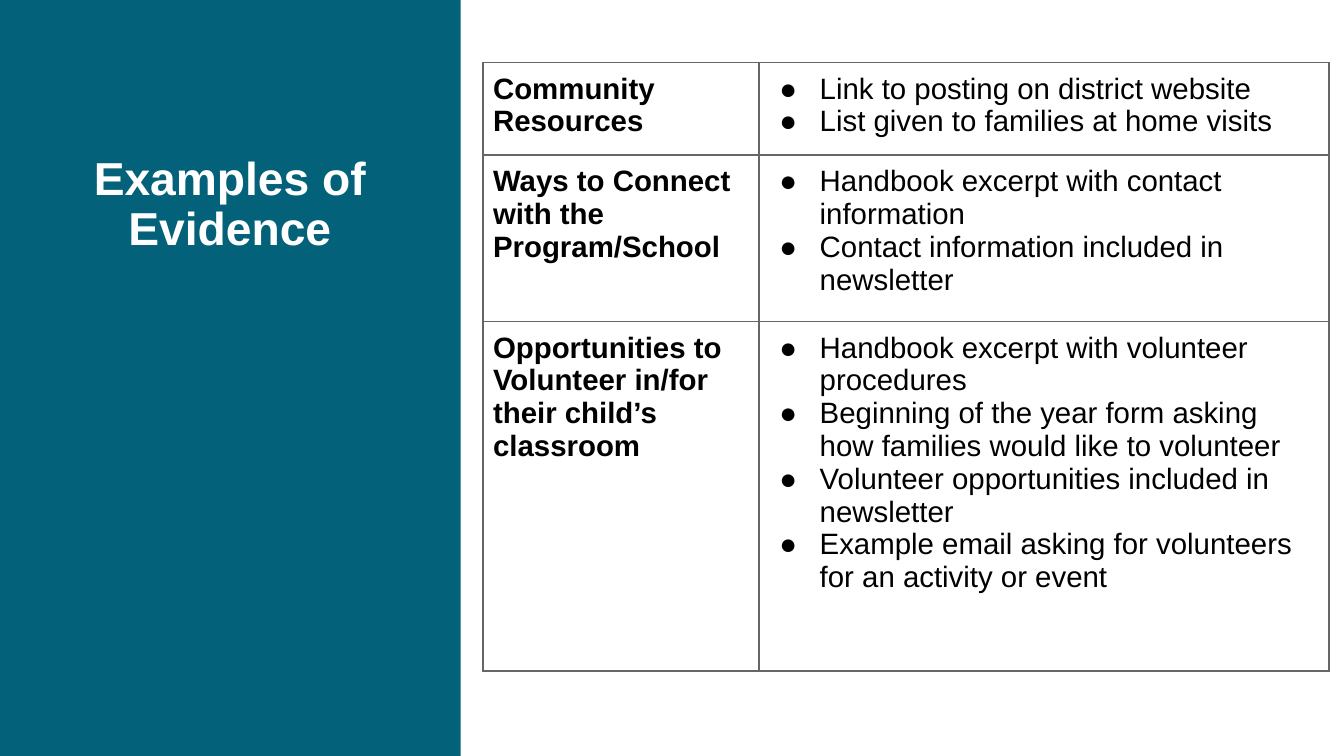
from pptx import Presentation
from pptx.dml.color import RGBColor
from pptx.enum import shapes, text
from pptx.oxml import parse_xml
from pptx.oxml import ns
from pptx.util import Inches, Pt

TITLE = "Examples of Evidence"
EVIDENCE = [
    ("Community Resources", [
        "Link to posting on district website",
        "List given to families at home visits",
    ]),
    ("Ways to Connect with the Program/School", [
        "Handbook excerpt with contact information",
        "Contact information included in newsletter",
    ]),
    ("Opportunities to Volunteer in/for their child’s classroom", [
        "Handbook excerpt with volunteer procedures",
        "Beginning of the year form asking how families would like to volunteer",
        "Volunteer opportunities included in newsletter",
        "Example email asking for volunteers for an activity or event",
    ]),
]
COLUMN_WIDTHS = [2.74, 5.65]
ROW_HEIGHTS = [0.92, 1.65, 3.47]
TABLE_LEFT, TABLE_TOP = 4.79, 0.62
TEAL, WHITE, BLACK, GRAY = "03617A", "FFFFFF", "000000", "666666"
TITLE_FONT = {"name": "Arial", "size": Pt(33), "bold": True}
HEADING_FONT = {"name": "Arial", "size": Pt(21), "bold": True}
ITEM_FONT = {**HEADING_FONT, "bold": False}
TITLE_BOX = {"left": Inches(0.15), "top": Inches(1.4),
             "width": Inches(4.26), "height": Inches(1.28)}
CELL_MARGINS = {f"margin_{side}": Inches(0.1)
                for side in ("left", "right", "top", "bottom")}
BULLET = {"marL": Inches(0.5), "indent": Inches(-0.4)}


def color(value):
    return RGBColor.from_string(value)


def apply(target, values):
    for name, value in values.items():
        setattr(target, name, value)


def add_text(paragraph, content, font, font_color):
    run = paragraph.add_run()
    run.text = content
    apply(run.font, font)
    run.font.color.rgb = color(font_color)


def add_bullet(paragraph):
    properties = paragraph._p.get_or_add_pPr()
    for name, value in BULLET.items():
        properties.set(name, str(value))
    for element in (f'<a:buClr {ns.nsdecls("a")}><a:srgbClr val="{BLACK}"/></a:buClr>',
                    f'<a:buFont {ns.nsdecls("a")} typeface="Arial"/>',
                    f'<a:buChar {ns.nsdecls("a")} char="●"/>'):
        properties.append(parse_xml(element))


def format_cell(cell):
    apply(cell, CELL_MARGINS)
    cell.vertical_anchor = text.MSO_ANCHOR.TOP
    properties = cell._tc.get_or_add_tcPr()
    for side in ("lnL", "lnR", "lnT", "lnB"):
        properties.append(parse_xml(
            f'<a:{side} {ns.nsdecls("a")} w="{Pt(1.5)}"><a:solidFill>'
            f'<a:srgbClr val="{GRAY}"/></a:solidFill></a:{side}>'))
    cell.fill.background()


def add_panel(slide):
    panel = slide.shapes.add_shape(shapes.MSO_SHAPE.RECTANGLE, 0, 0,
                                   Inches(4.57), Inches(7.5))
    panel.shadow.inherit = False
    panel.fill.solid()
    panel.fill.fore_color.rgb = color(TEAL)
    panel.line.fill.background()
    slide.shapes._spTree.insert(2, panel._element)


def add_title(slide):
    title = slide.shapes.title
    apply(title, TITLE_BOX)
    apply(title.text_frame, {"word_wrap": True,
                             "auto_size": text.MSO_AUTO_SIZE.NONE,
                             "vertical_anchor": text.MSO_ANCHOR.MIDDLE})
    paragraph = title.text_frame.paragraphs[0]
    apply(paragraph, {"alignment": text.PP_ALIGN.CENTER, "line_spacing": 0.9})
    add_text(paragraph, TITLE, TITLE_FONT, WHITE)


def add_evidence_table(slide):
    table = slide.shapes.add_table(
        len(EVIDENCE), len(COLUMN_WIDTHS), Inches(TABLE_LEFT), Inches(TABLE_TOP),
        Inches(sum(COLUMN_WIDTHS)), Inches(sum(ROW_HEIGHTS))).table
    apply(table, {"first_row": False, "horz_banding": False})
    for column, width in zip(table.columns, COLUMN_WIDTHS):
        column.width = Inches(width)
    for row, height, (heading, items) in zip(table.rows, ROW_HEIGHTS, EVIDENCE):
        row.height = Inches(height)
        heading_cell, items_cell = row.cells
        format_cell(heading_cell)
        format_cell(items_cell)
        add_text(heading_cell.text_frame.paragraphs[0], heading, HEADING_FONT, BLACK)
        frame = items_cell.text_frame
        for index, item in enumerate(items):
            paragraph = frame.add_paragraph() if index else frame.paragraphs[0]
            add_bullet(paragraph)
            add_text(paragraph, item, ITEM_FONT, BLACK)


def main():
    presentation = Presentation()
    apply(presentation, {"slide_width": Inches(13.33), "slide_height": Inches(7.5)})
    slide = presentation.slides.add_slide(presentation.slide_layouts[5])
    add_panel(slide)
    add_title(slide)
    add_evidence_table(slide)
    presentation.save("out.pptx")


if __name__ == "__main__":
    main()
